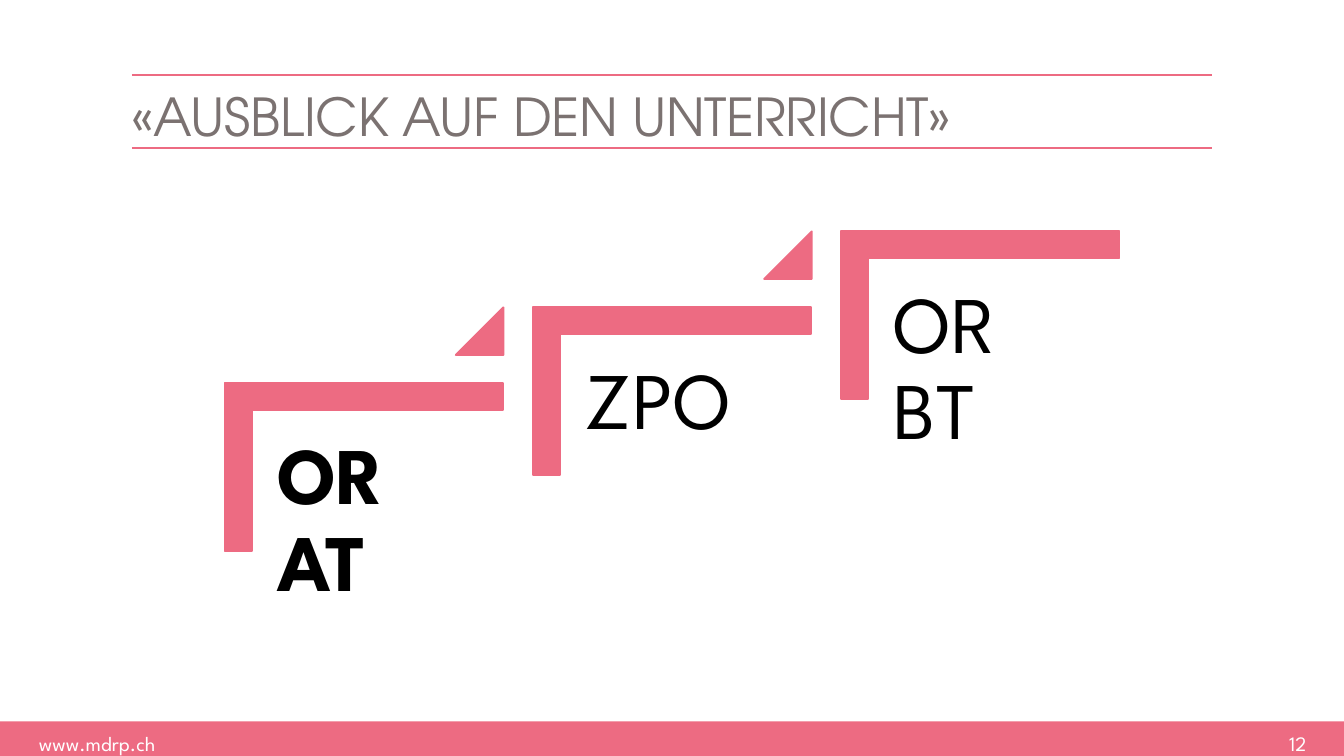
from lxml import etree
from pptx import Presentation
from pptx.dml.color import RGBColor
from pptx.enum.shapes import MSO_CONNECTOR, MSO_SHAPE
from pptx.enum.text import MSO_ANCHOR, MSO_AUTO_SIZE, PP_ALIGN
from pptx.oxml.ns import qn
from pptx.util import Pt

LEFT, RIGHT = PP_ALIGN.LEFT, PP_ALIGN.RIGHT
TOP = MSO_ANCHOR.TOP
NO_AUTOFIT = MSO_AUTO_SIZE.NONE
STRAIGHT = MSO_CONNECTOR.STRAIGHT
RECT, CORNER, TRIANGLE = (MSO_SHAPE.RECTANGLE, MSO_SHAPE.CORNER,
                          MSO_SHAPE.ISOSCELES_TRIANGLE)

COLORS = {"pink": "ED6B82", "gray": "7B7271", "white": "FFFFFF", "black": "000000"}
TITLE_FONT, BODY_FONT = "TeX Gyre Adventor", "League Spartan"

# Each step lies one stride right of and one rise above the step before
STEPS = [("OR AT", True), ("ZPO", False), ("OR BT", False)]
STRIDE, RISE = 165.2, 40.7


def rgb(name):
    return RGBColor.from_string(COLORS[name])


def fill_text(shape, text, size, font, color, align=LEFT, bold=False,
              inset=0, spacing=None):
    tf = shape.text_frame
    tf.word_wrap = True
    tf.auto_size = NO_AUTOFIT
    tf.vertical_anchor = TOP
    tf.margin_left = tf.margin_right = tf.margin_top = tf.margin_bottom = Pt(inset)
    p = tf.paragraphs[0]
    p.alignment = align
    if spacing:
        p.line_spacing = spacing
    r = p.add_run()
    r.text = text
    r.font.size = Pt(size)
    r.font.name = font
    r.font.bold = bold
    r.font.color.rgb = rgb(color)
    return r


def add_text(s, text, x, y, w, h, size, color, **options):
    box = s.shapes.add_textbox(Pt(x), Pt(y), Pt(w), Pt(h))
    fill_text(box, text, size, BODY_FONT, color, **options)


def add_block(s, kind, x, y, w, h, adjustments=(), rotation=0, outline=True):
    sp = s.shapes.add_shape(kind, Pt(x), Pt(y), Pt(w), Pt(h))
    sp.shadow.inherit = False
    sp.rotation = rotation
    for i, value in enumerate(adjustments):
        sp.adjustments[i] = value
    sp.fill.solid()
    sp.fill.fore_color.rgb = rgb("pink")
    if outline:
        sp.line.color.rgb = rgb("pink")
        sp.line.width = Pt(1)
    else:
        sp.line.fill.background()


def add_rule(s, y):
    line = s.shapes.add_connector(STRAIGHT, Pt(70.7), Pt(y), Pt(649.3), Pt(y))
    line.line.color.rgb = rgb("pink")
    line.line.width = Pt(1)
    etree.SubElement(line._element.spPr, qn("a:effectLst"))


def add_title(s, text):
    title = s.shapes.title
    title.left, title.top, title.width, title.height = Pt(70.7), Pt(40.3), Pt(578.5), Pt(37.4)
    r = fill_text(title, text, 28, TITLE_FONT, "gray", spacing=1.14)
    r.font._element.set("spc", "-10")


def add_step(s, index, text, bold):
    dx, dy = index * STRIDE, -index * RISE
    add_block(s, CORNER, 149.8 + dx, 175.7 + dy, 90, 149, (0.161, 0.161), rotation=90)
    add_text(s, text, 135.4 + dx, 220.4 + dy, 134.6, 118, 43, "black",
             bold=bold, inset=13, spacing=0.9)
    if index < len(STEPS) - 1:
        add_block(s, TRIANGLE, 244.2 + dx, 164.7 + dy, 25.5, 25.5, (1,))


def main():
    prs = Presentation()
    prs.slide_width, prs.slide_height = Pt(720), Pt(405)
    s = prs.slides.add_slide(prs.slide_layouts[5])

    # Footer band with address and page number
    add_block(s, RECT, 0, 386.5, 720, 18.5, outline=False)
    add_text(s, "www.mdrp.ch", 20.9, 391.7, 73.4, 13.7, 11, "white")
    add_text(s, "12", 656, 391.7, 43.9, 10.1, 11, "white", align=RIGHT)

    # Title between two rules
    for y in (40.1, 79.2):
        add_rule(s, y)
    add_title(s, "«AUSBLICK AUF DEN UNTERRICHT»")

    # Rising steps
    for i, (text, bold) in enumerate(STEPS):
        add_step(s, i, text, bold)

    prs.save("out.pptx")


if __name__ == "__main__":
    main()
